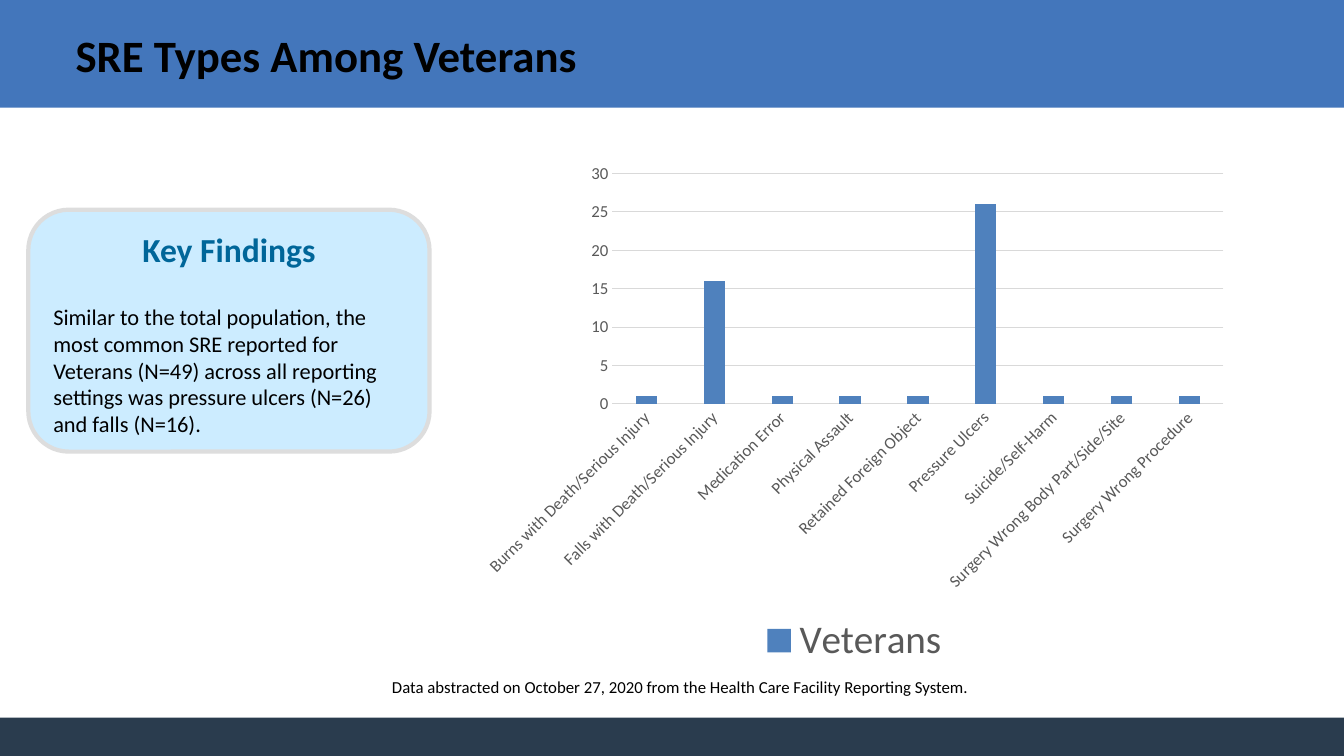
"""Build the slide on SRE types among veterans."""
from pptx import Presentation
from pptx.chart.data import CategoryChartData
from pptx.dml.color import RGBColor
from pptx.enum.chart import XL_CHART_TYPE, XL_LEGEND_POSITION, XL_TICK_MARK
from pptx.enum.shapes import MSO_SHAPE
from pptx.enum.text import MSO_ANCHOR, PP_ALIGN
from pptx.util import Pt

COLUMNS = XL_CHART_TYPE.COLUMN_CLUSTERED
BOTTOM = XL_LEGEND_POSITION.BOTTOM
NO_TICK = XL_TICK_MARK.NONE
RECTANGLE, ROUNDED = MSO_SHAPE.RECTANGLE, MSO_SHAPE.ROUNDED_RECTANGLE
TOP, MIDDLE = MSO_ANCHOR.TOP, MSO_ANCHOR.MIDDLE
LEFT, CENTER = PP_ALIGN.LEFT, PP_ALIGN.CENTER

TITLE = "SRE Types Among Veterans"
FINDINGS_HEADING = "Key Findings"
FINDINGS = (
    "Similar to the total population, the most common SRE reported for "
    "Veterans (N=49) across all reporting settings was pressure ulcers (N=26) "
    "and falls (N=16)."
)
SOURCE_NOTE = ("Data abstracted on October 27, 2020 from the Health Care "
               "Facility Reporting System.")
SERIES_NAME = "Veterans"
EVENTS = {
    "Burns with Death/Serious Injury": 1,
    "Falls with Death/Serious Injury": 16,
    "Medication Error": 1,
    "Physical Assault": 1,
    "Retained Foreign Object": 1,
    "Pressure Ulcers": 26,
    "Suicide/Self-Harm": 1,
    "Surgery Wrong Body Part/Side/Site": 1,
    "Surgery Wrong Procedure": 1,
}

WIDTH, HEIGHT = 960, 540
HEADER_HEIGHT, FOOTER_HEIGHT = 77, 27.4
TITLE_AREA = (46.8, 4.3, 864, 69.1)
NOTE_AREA = (272.9, 480.2, 464.4, 21.6)
CHART_AREA = (335.5, 109.4, 549.4, 370.8)
FINDINGS_AREA = (20.2, 149.8, 286.6, 172.8)


class Theme:
    """Colours and text formats of the slide."""
    HEADER = RGBColor.from_string("4376BB")
    FOOTER = RGBColor.from_string("2A3C4E")
    PANEL = RGBColor.from_string("CCECFF")
    PANEL_LINE = RGBColor.from_string("DDDDDD")
    GRID = RGBColor.from_string("D9D9D9")
    COLUMN = RGBColor.from_string("4F81BD")
    BLACK = RGBColor.from_string("000000")
    GREY = RGBColor.from_string("595959")
    ACCENT = RGBColor.from_string("006699")
    TITLE = {"size": Pt(32), "bold": True, "color": BLACK}
    HEADING = {"size": Pt(24), "bold": True, "color": ACCENT}
    BODY = {"size": Pt(16), "bold": False, "color": BLACK}
    NOTE = {"size": Pt(12), "color": BLACK}
    CHART = {"size": Pt(10), "color": BLACK}
    AXIS = {"size": Pt(12), "color": GREY}
    LEGEND = {"size": Pt(28), "color": GREY}


def set_font(font, style):
    for name, value in {"name": "Calibri", **style}.items():
        if name == "color":
            font.color.rgb = value
        else:
            setattr(font, name, value)


def set_values(target, values):
    for name, value in values.items():
        setattr(target, name, value)


def place(area):
    return [Pt(length) for length in area]


def write(para, text, style, align=LEFT):
    para.alignment = align
    span = para.add_run()
    span.text = text
    set_font(span.font, style)


def add_panel(page, kind, area, fill, line=None):
    panel = page.shapes.add_shape(kind, *place(area))
    panel.shadow.inherit = False
    panel.fill.solid()
    panel.fill.fore_color.rgb = fill
    if line is None:
        panel.line.fill.background()
    else:
        panel.line.color.rgb = line
        panel.line.width = Pt(3)
    return panel


def add_title(page):
    title = page.shapes.title
    set_values(title, dict(zip(("left", "top", "width", "height"), place(TITLE_AREA))))
    title.text_frame.vertical_anchor = MIDDLE
    write(title.text_frame.paragraphs[0], TITLE, Theme.TITLE)
    page.shapes.element.append(title.element)


def add_note(page):
    box = page.shapes.add_textbox(*place(NOTE_AREA))
    box.text_frame.word_wrap = True
    write(box.text_frame.paragraphs[0], SOURCE_NOTE, Theme.NOTE)


def add_findings(page):
    panel = add_panel(page, ROUNDED, FINDINGS_AREA, Theme.PANEL, Theme.PANEL_LINE)
    panel.adjustments[0] = 0.167
    frame = panel.text_frame
    set_values(frame, {
        "word_wrap": True, "vertical_anchor": TOP,
        "margin_left": Pt(9.4), "margin_right": Pt(9.4),
        "margin_top": Pt(5), "margin_bottom": Pt(5),
    })
    write(frame.paragraphs[0], FINDINGS_HEADING, Theme.HEADING, CENTER)
    body = frame.add_paragraph()
    body.space_before = Pt(24.4)
    write(body, FINDINGS, Theme.BODY)


def add_events_chart(page):
    data = CategoryChartData()
    data.categories = list(EVENTS)
    data.add_series(SERIES_NAME, list(EVENTS.values()))
    chart = page.shapes.add_chart(COLUMNS, *place(CHART_AREA), data).chart
    chart.has_title = False
    set_font(chart.font, Theme.CHART)

    chart.has_legend = True
    set_values(chart.legend, {"position": BOTTOM, "include_in_layout": False})
    set_font(chart.legend.font, Theme.LEGEND)

    plot = chart.plots[0]
    set_values(plot, {"gap_width": 219, "overlap": -27, "vary_by_categories": False})
    fill = plot.series[0].format.fill
    fill.solid()
    fill.fore_color.rgb = Theme.COLUMN

    events, counts = chart.category_axis, chart.value_axis
    for axis in (events, counts):
        set_values(axis, {"major_tick_mark": NO_TICK, "minor_tick_mark": NO_TICK})
        set_font(axis.tick_labels.font, Theme.AXIS)
    events.tick_labels.font._element.getparent().getparent().getparent().bodyPr.set(
        "rot", "-2700000")
    set_values(counts, {"minimum_scale": 0, "maximum_scale": 30, "major_unit": 5,
                        "has_major_gridlines": True})
    counts.format.line.fill.background()
    for line in (events.format.line, counts.major_gridlines.format.line):
        line.color.rgb = Theme.GRID
        line.width = Pt(0.75)


def main():
    deck = Presentation()
    deck.slide_width, deck.slide_height = Pt(WIDTH), Pt(HEIGHT)
    page = deck.slides.add_slide(deck.slide_layouts[5])
    add_panel(page, RECTANGLE, (0, 0, WIDTH, HEADER_HEIGHT), Theme.HEADER)
    add_panel(page, RECTANGLE, (0, HEIGHT - FOOTER_HEIGHT, WIDTH, FOOTER_HEIGHT),
              Theme.FOOTER)
    add_title(page)
    add_note(page)
    add_events_chart(page)
    add_findings(page)
    deck.save("out.pptx")


if __name__ == "__main__":
    main()
